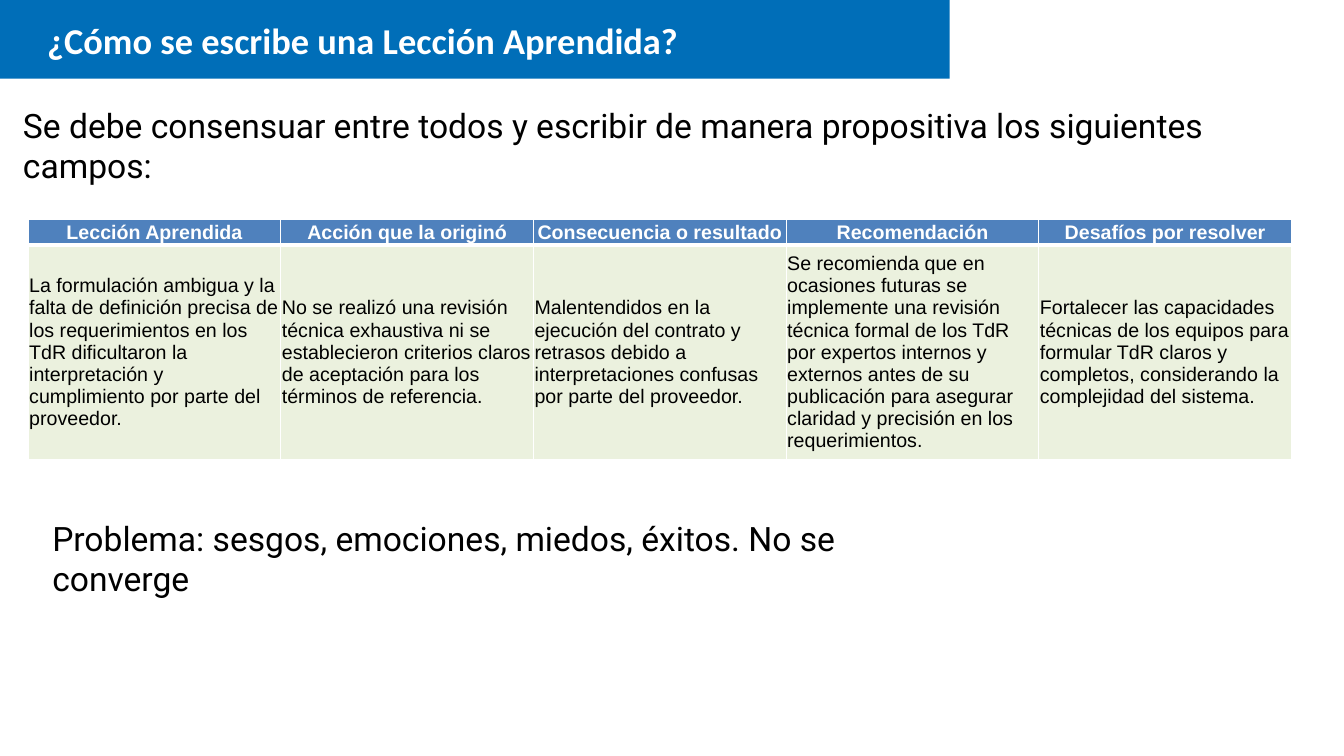
import dataclasses

import lxml.etree
import pptx
import pptx.dml.color
import pptx.enum.shapes
import pptx.enum.text
import pptx.oxml.ns
import pptx.util

Inches = pptx.util.Inches
ANCHOR = pptx.enum.text.MSO_ANCHOR
ALIGN = pptx.enum.text.PP_ALIGN


@dataclasses.dataclass(frozen=True)
class Theme:
    banner: str = "006EB8"
    header: str = "4F81BD"
    body: str = "EBF1DE"
    light: str = "FFFFFF"
    dark: str = "000000"
    title_font: str = "Calibri"
    text_font: str = "Roboto"
    table_font: str = "Arial"
    title_size: int = 26
    text_size: int = 24
    table_size: int = 14
    thin: int = 1
    thick: int = 3


THEME = Theme()

FIELDS = [
    ("Lección Aprendida",
     "La formulación ambigua y la falta de definición precisa de los requerimientos en los TdR "
     "dificultaron la interpretación y cumplimiento por parte del proveedor."),
    ("Acción que la originó",
     "No se realizó una revisión técnica exhaustiva ni se establecieron criterios claros de "
     "aceptación para los términos de referencia."),
    ("Consecuencia o resultado",
     "Malentendidos en la ejecución del contrato y retrasos debido a interpretaciones confusas "
     "por parte del proveedor."),
    ("Recomendación",
     "Se recomienda que en ocasiones futuras se implemente una revisión técnica formal de los TdR "
     "por expertos internos y externos antes de su publicación para asegurar claridad y precisión "
     "en los requerimientos."),
    ("Desafíos por resolver",
     "Fortalecer las capacidades técnicas de los equipos para formular TdR claros y completos, "
     "considerando la complejidad del sistema."),
]


def rgb(color):
    return pptx.dml.color.RGBColor.from_string(color)


def write(tf, text, font, size, color, bold=False, align=ALIGN.LEFT, spacing=None):
    p = tf.paragraphs[0]
    p.alignment = align
    p.line_spacing = spacing
    r = p.add_run()
    r.text = text
    r.font.name = font
    r.font.size = pptx.util.Pt(size)
    r.font.bold = bold
    r.font.color.rgb = rgb(color)


def add_text(slide, box, text, **fmt):
    tf = slide.shapes.add_textbox(*map(Inches, box)).text_frame
    tf.word_wrap = True
    write(tf, text, **fmt)


def add_banner(slide, box, text):
    x, y, w, h = box
    sp = slide.shapes.add_shape(pptx.enum.shapes.MSO_SHAPE.RECTANGLE, *map(Inches, box))
    sp.shadow.inherit = False
    sp.fill.solid()
    sp.fill.fore_color.rgb = rgb(THEME.banner)
    sp.line.fill.background()
    indent = 0.37
    add_text(slide, (x + indent, y + 0.21, w - indent, 0.45), text, font=THEME.title_font,
             size=THEME.title_size, color=THEME.light, bold=True, spacing=0.9)


def set_borders(cell, **widths):
    tc_pr = cell._tc.get_or_add_tcPr()
    for side in "LRTB":
        width = pptx.util.Pt(widths.get(side, THEME.thin))
        ln = lxml.etree.SubElement(tc_pr, pptx.oxml.ns.qn("a:ln" + side), w=str(width))
        fill = lxml.etree.SubElement(ln, pptx.oxml.ns.qn("a:solidFill"))
        lxml.etree.SubElement(fill, pptx.oxml.ns.qn("a:srgbClr"), val=THEME.light)


def fill_cell(cell, text, fill, borders, **fmt):
    cell.margin_left = cell.margin_right = Inches(0.01)
    cell.margin_top = cell.margin_bottom = Inches(0.01)
    cell.vertical_anchor = ANCHOR.MIDDLE
    set_borders(cell, **borders)
    cell.fill.solid()
    cell.fill.fore_color.rgb = rgb(fill)
    write(cell.text_frame, text, font=THEME.table_font, size=THEME.table_size, **fmt)


def add_fields_table(slide, box, fields):
    x, y, w, h = box
    table = slide.shapes.add_table(2, len(fields), *map(Inches, box)).table
    header_height = 0.24
    table.rows[0].height = Inches(header_height)
    table.rows[1].height = Inches(h - header_height)
    for i, (name, example) in enumerate(fields):
        table.columns[i].width = Inches(w / len(fields))
        fill_cell(table.cell(0, i), name, THEME.header, {"B": THEME.thick},
                  color=THEME.light, bold=True, align=ALIGN.CENTER)
        fill_cell(table.cell(1, i), example, THEME.body, {"T": THEME.thick}, color=THEME.dark)


def add_statement(slide, box, text):
    add_text(slide, box, text, font=THEME.text_font, size=THEME.text_size, color=THEME.dark)


def main():
    prs = pptx.Presentation()
    prs.slide_width, prs.slide_height = Inches(13.33), Inches(7.5)
    slide = prs.slides.add_slide(prs.slide_layouts[6])
    add_banner(slide, (0, -0.03, 9.42, 0.81), "¿Cómo se escribe una Lección Aprendida?")
    add_fields_table(slide, (0.28, 2.18, 12.53, 2.22), FIELDS)
    add_statement(slide, (0.13, 0.99, 12.16, 0.5),
                  "Se debe consensuar entre todos y escribir de manera propositiva los siguientes campos:")
    add_statement(slide, (0.42, 5.09, 8.59, 0.5),
                  "Problema: sesgos, emociones, miedos, éxitos. No se converge")
    prs.save("out.pptx")


if __name__ == "__main__":
    main()
